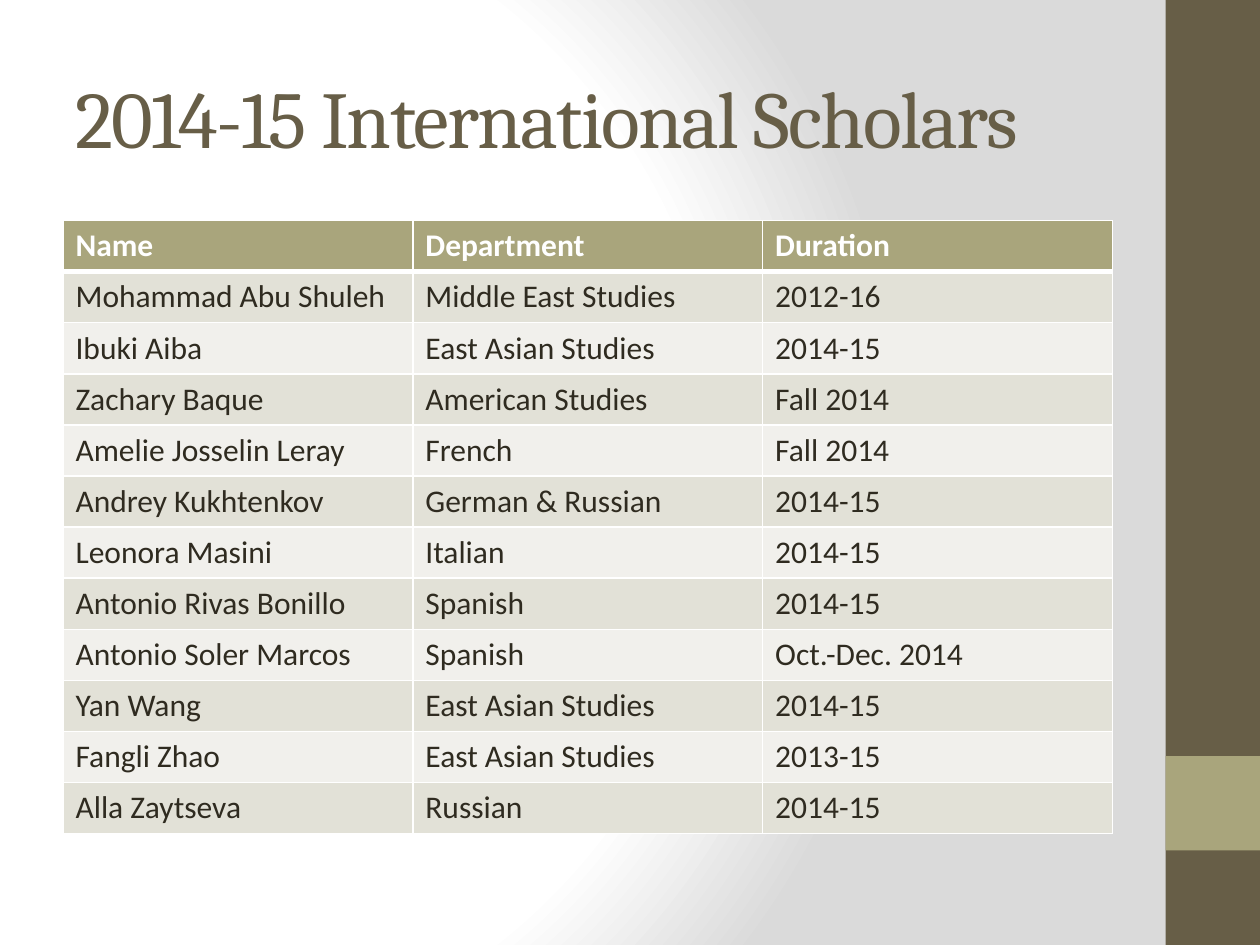
"""Build the slide listing the 2014-15 international scholars."""
from typing import NamedTuple

from lxml import etree
from pptx import Presentation
from pptx.dml.color import RGBColor
from pptx.enum.shapes import MSO_SHAPE
from pptx.enum.text import MSO_ANCHOR
from pptx.oxml import parse_xml
from pptx.oxml.ns import nsdecls, qn
from pptx.util import Inches, Pt

RECTANGLE = MSO_SHAPE.RECTANGLE
MIDDLE = MSO_ANCHOR.MIDDLE

BROWN, OLIVE, INK, WHITE = "675E47", "A9A57C", "2F2B20", "FFFFFF"
ROW_FILLS = ("E2E1D7", "F1F0EC")
BACKDROP_STOPS = ((0, WHITE), (75, WHITE), (100, "DADADA"))
HEADINGS = ("Name", "Department", "Duration")


class Band(NamedTuple):
    top: float
    height: float
    color: str


class Scholar(NamedTuple):
    name: str
    department: str
    duration: str


SIDE_BANDS = (Band(0, 7.5, BROWN), Band(6, 0.75, OLIVE))
SCHOLARS = (
    Scholar("Mohammad Abu Shuleh", "Middle East Studies", "2012-16"),
    Scholar("Ibuki Aiba", "East Asian Studies", "2014-15"),
    Scholar("Zachary Baque", "American Studies", "Fall 2014"),
    Scholar("Amelie Josselin Leray", "French", "Fall 2014"),
    Scholar("Andrey Kukhtenkov", "German & Russian", "2014-15"),
    Scholar("Leonora Masini", "Italian", "2014-15"),
    Scholar("Antonio Rivas Bonillo", "Spanish", "2014-15"),
    Scholar("Antonio Soler Marcos", "Spanish", "Oct.-Dec. 2014"),
    Scholar("Yan Wang", "East Asian Studies", "2014-15"),
    Scholar("Fangli Zhao", "East Asian Studies", "2013-15"),
    Scholar("Alla Zaytseva", "Russian", "2014-15"),
)


def rgb(color: str) -> RGBColor:
    return RGBColor.from_string(color)


def paint_backdrop(slide) -> None:
    slide.background.fill.gradient()
    gradient = slide.element.find(".//" + qn("a:gradFill"))
    stops = "".join(
        f'<a:gs pos="{position * 1000}"><a:srgbClr val="{color}"/></a:gs>'
        for position, color in BACKDROP_STOPS
    )
    radial = parse_xml(
        f'<a:gradFill {nsdecls("a")} rotWithShape="1"><a:gsLst>{stops}</a:gsLst>'
        '<a:path path="circle"><a:fillToRect l="20000" t="50000" r="100000" b="50000"/>'
        "</a:path></a:gradFill>"
    )
    gradient.getparent().replace(gradient, radial)


def add_band(slide, band: Band) -> None:
    strip = slide.shapes.add_shape(
        RECTANGLE, Inches(9.25), Inches(band.top), Inches(0.75), Inches(band.height)
    )
    strip.shadow.inherit = False
    strip.fill.solid()
    strip.fill.fore_color.rgb = rgb(band.color)
    strip.line.fill.background()


def add_run(paragraph, text: str, font: str, size: float, color: str, bold: bool = False):
    run = paragraph.add_run()
    run.text = text
    run.font.name = font
    run.font.size = Pt(size)
    run.font.bold = bold
    run.font.color.rgb = rgb(color)
    return run


def add_title(slide, text: str) -> None:
    title = slide.shapes.add_textbox(Inches(0.5), Inches(0.3), Inches(8.33), Inches(1.25))
    title.text_frame.word_wrap = True
    title.text_frame.vertical_anchor = MIDDLE
    run = add_run(title.text_frame.paragraphs[0], text, "Cambria", 46, BROWN)
    run.font._element.set("spc", "-100")


def add_border(cell, side: str, width: float) -> None:
    properties = cell._tc.get_or_add_tcPr()
    border = etree.SubElement(properties, qn(f"a:ln{side}"), w=str(Pt(width)))
    solid = etree.SubElement(border, qn("a:solidFill"))
    etree.SubElement(solid, qn("a:srgbClr"), val=WHITE)


def fill_cell(cell, text: str, row: int) -> None:
    is_heading = row == 0
    widths = {"L": 1, "R": 1, "T": 3 if row == 1 else 1, "B": 3 if is_heading else 1}
    for side, width in widths.items():
        add_border(cell, side, width)
    cell.fill.solid()
    cell.fill.fore_color.rgb = rgb(OLIVE if is_heading else ROW_FILLS[(row - 1) % 2])
    color = WHITE if is_heading else INK
    add_run(cell.text_frame.paragraphs[0], text, "Calibri", 18, color, is_heading)


def add_scholar_table(slide) -> None:
    entries = (HEADINGS, *SCHOLARS)
    table = slide.shapes.add_table(
        len(entries), len(HEADINGS), Inches(0.5), Inches(1.75), Inches(8.33), Inches(4.87)
    ).table
    for row, entry in enumerate(entries):
        for column, text in enumerate(entry):
            fill_cell(table.cell(row, column), text, row)


def main() -> None:
    deck = Presentation()
    deck.slide_width, deck.slide_height = Inches(10), Inches(7.5)
    slide = deck.slides.add_slide(deck.slide_layouts[6])
    paint_backdrop(slide)
    for band in SIDE_BANDS:
        add_band(slide, band)
    add_title(slide, "2014-15 International Scholars")
    add_scholar_table(slide)
    deck.save("out.pptx")


if __name__ == "__main__":
    main()
